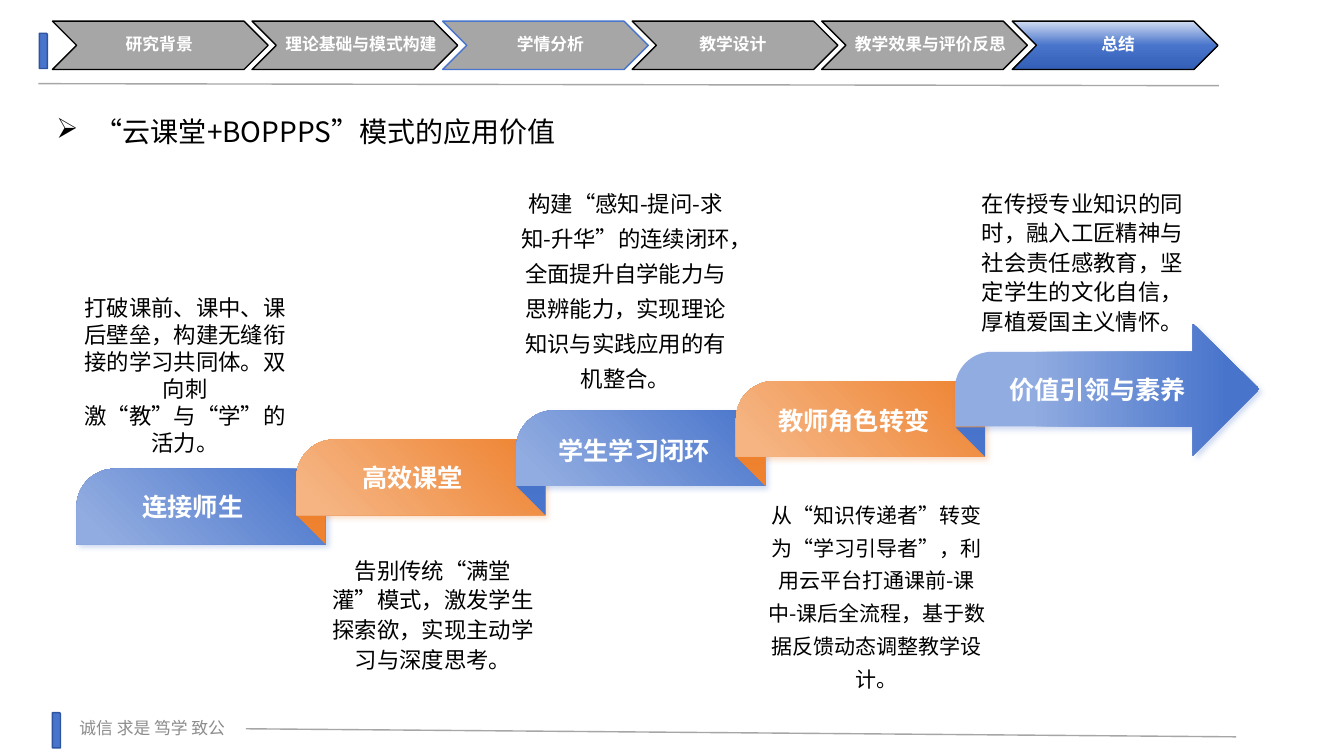
"""Build the slide on the application value of the teaching model."""
import math

from pptx import Presentation
from pptx import util as u
from pptx.dml.color import RGBColor
from pptx.enum import lang, shapes, text
from pptx.oxml import parse_xml
from pptx.oxml.ns import nsdecls, qn

COLORS = {
    "blue": "4874CB", "light_blue": "91ACE0", "edge_blue": "2E54A1",
    "pale_blue": "D1DCF2", "deep_blue": "345FB6",
    "orange": "EE822F", "light_orange": "F5B482",
    "gray": "A6A6A6", "motto": "8C8C8C", "black": "000000", "white": "FFFFFF",
}
CJK = "Noto Sans CJK SC"

# label, label left, chevron left, chevron width, outline
NAV = [
    ("研究背景", 0.73, 0.52, 2.14, "black"),
    ("理论基础与模式构建", 2.73, 2.5, 2.04, "black"),
    ("学情分析", 4.61, 4.39, 2.04, "blue"),
    ("教学设计", 6.42, 6.27, 2.04, "black"),
    ("教学效果与评价反思", 8.38, 8.15, 2.04, "black"),
    ("总结", 10.24, 10.04, 2.04, "black"),
]
MARKERS = [(0.39, 0.33), (0.52, 7.07)]
RULES = [(0.38, 0.83, 12.09, 0.85), (2.44, 7.23, 12.26, 7.31)]
MOTTO = "诚信 求是 笃学 致公"
TITLE = "“云课堂+BOPPPS”模式的应用价值"
STEPS = [
    ("连接师生", (0.08, 0.08, 0.35, 0.08)),
    ("高效课堂", (0.08, 0.08, 0.35, 0.08)),
    ("学生学习闭环", (0.08, 0.12, 0.32, 0.08)),
    ("教师角色转变", (0.08, 0.12, 0.32, 0.08)),
]
GOAL = "价值引领与素养"
# box, anchor, size, line spacing, words
NOTES = [
    ((0.74, 3.12, 2.19, 1.4), "BOTTOM", 16, None,
     "打破课前、课中、课后壁垒，构建无缝衔接的学习共同体。双向刺激“教”与“学”的活力。"),
    ((3.2, 5.5, 2.19, 1.25), "TOP", 16, 1.1,
     "告别传统“满堂灌”模式，激发学生探索欲，实现主动学习与深度思考。"),
    ((5.11, 2.49, 2.19, 1.4), "BOTTOM", 16, 1.3,
     "构建“感知-提问-求知-升华”的连续闭环，全面提升自学能力与思辨能力，实现理论知识与实践应用的有机整合。"),
    ((7.6, 4.91, 2.19, 1.25), "TOP", 15, 1.3,
     "从“知识传递者”转变为“学习引导者”，利用云平台打通课前-课中-课后全流程，基于数据反馈动态调整教学设计。"),
    ((9.64, 1.84, 2.19, 1.48), "BOTTOM", 16, 1.1,
     "在传授专业知识的同时，融入工匠精神与社会责任感教育，坚定学生的文化自信，厚植爱国主义情怀。"),
]
STEP_LEFT, STEP_TOP, STEP_DX, STEP_DY = 0.76, 4.65, 2.18, 0.29
BAND_W, BAND_H, FOLD = 2.47, 0.75, 0.29


def rgb(name):
    return RGBColor.from_string(COLORS[name])


def paint(sp, fill, line=None):
    sp.shadow.inherit = False
    sp.fill.solid()
    sp.fill.fore_color.rgb = rgb(fill)
    if line:
        sp.line.color.rgb = rgb(line)
        sp.line.width = u.Pt(1)
    else:
        sp.line.fill.background()


def add_gradient(sp, stops, angle):
    marks = "".join(
        f'<a:gs pos="{pos * 1000}"><a:srgbClr val="{COLORS[name]}"/></a:gs>'
        for pos, name in stops)
    grad = parse_xml(
        f'<a:gradFill {nsdecls("a")} rotWithShape="1"><a:gsLst>{marks}</a:gsLst>'
        f'<a:lin ang="{angle * 60000}" scaled="0"/></a:gradFill>')
    props = sp._element.spPr
    props.replace(props.find(qn("a:solidFill")), grad)


def add_shadow(sp, name):
    sp._element.spPr.find(qn("a:effectLst")).append(parse_xml(
        f'<a:outerShdw {nsdecls("a")} blurRad="50800" dist="38100" dir="2700000" '
        f'algn="tl" rotWithShape="0"><a:srgbClr val="{COLORS[name]}">'
        '<a:alpha val="25000"/></a:srgbClr></a:outerShdw>'))


def write(sp, words, size, color, font=CJK, bold=False, align="CENTER",
          anchor="TOP", insets=(0, 0, 0, 0), spacing=None, bullet=None):
    tf = sp.text_frame
    left, top, right, bottom = map(u.Inches, insets)
    frame = {"word_wrap": True, "margin_left": left, "margin_top": top,
             "margin_right": right, "margin_bottom": bottom,
             "vertical_anchor": getattr(text.MSO_ANCHOR, "MIDDLE" if anchor == "MIDDLE" else anchor)}
    for key, value in frame.items():
        setattr(tf, key, value)
    p = tf.paragraphs[0]
    p.alignment = getattr(text.PP_ALIGN, align)
    if spacing:
        p.line_spacing = spacing
    if bullet:
        pPr = p._p.get_or_add_pPr()
        pPr.set("marL", str(u.Inches(0.38)))
        pPr.set("indent", str(u.Inches(-0.38)))
        pPr.append(parse_xml(f'<a:buChar {nsdecls("a")} char="{bullet}"/>'))
    r = p.add_run()
    r.text = words
    style = {"name": font, "size": u.Pt(size), "bold": bold,
             "language_id": lang.MSO_LANGUAGE_ID.SIMPLIFIED_CHINESE}
    for key, value in style.items():
        setattr(r.font, key, value)
    r.font.color.rgb = rgb(color)
    r.font._element.find(qn("a:latin")).addnext(
        parse_xml(f'<a:ea {nsdecls("a")} typeface="{CJK}"/>'))


def main():
    prs = Presentation()
    prs.slide_width, prs.slide_height = u.Inches(13.33), u.Inches(7.5)
    s = prs.slides.add_slide(prs.slide_layouts[6])

    def shape(kind, *box):
        return s.shapes.add_shape(getattr(shapes.MSO_SHAPE, kind), *map(u.Inches, box))

    def textbox(*box):
        return s.shapes.add_textbox(*map(u.Inches, box))

    for left, top in MARKERS:
        paint(shape("ROUND_1_RECTANGLE", left, top, 0.08, 0.35), "blue", "edge_blue")
    for _, _, left, width, line in NAV:
        sp = shape("CHEVRON", left, 0.21, width, 0.48)
        paint(sp, "gray", line)
    add_gradient(sp, [(0, "pale_blue"), (50, "blue"), (100, "deep_blue")], 90)
    for ends in RULES:
        rule = s.shapes.add_connector(shapes.MSO_CONNECTOR.STRAIGHT, *map(u.Inches, ends))
        rule.line.color.rgb = rgb("gray")
        rule.line.width = u.Pt(1)
        rule._element.spPr.append(parse_xml(f'<a:effectLst {nsdecls("a")}/>'))
    write(textbox(0.69, 7.07, 2.9, 0.3), MOTTO, 12, "motto", "Arial",
          align="LEFT", insets=(0.1, 0.05, 0.1, 0.05))
    for label, left, *_ in NAV:
        write(textbox(left, 0.29, 1.7, 0.3), label, 12, "white", "Arial", True,
              insets=(0.05, 0.05, 0.05, 0.05))
    write(textbox(0.52, 0.93, 10.86, 0.46), TITLE, 20, "black", align="LEFT",
          insets=(0.04, 0.04, 0.04, 0.04), spacing=1.5, bullet="➢")

    for i, (label, insets) in enumerate(STEPS):
        left, top = STEP_LEFT + i * STEP_DX, STEP_TOP - i * STEP_DY
        color, after = ("blue", "orange") if i % 2 == 0 else ("orange", "blue")
        band = shape("ROUND_1_RECTANGLE", left, top, BAND_W, BAND_H)
        band.adjustments[0] = 0.5
        band._element.spPr.find(qn("a:xfrm")).set("flipH", "1")
        paint(band, color)
        add_gradient(band, [(0, color), (90, "light_" + color)], 45)
        add_shadow(band, color)
        write(band, label, 18, "white", bold=True, anchor="MIDDLE", insets=insets)
        fold = shape("RIGHT_TRIANGLE", left + STEP_DX, top + BAND_H - FOLD, FOLD, FOLD)
        fold.rotation = 180
        paint(fold, after)

    left, radius = 9.47, 0.37
    curve = [(left + radius * (1 - math.cos(a)), 3.86 - radius * math.sin(a))
             for a in (math.pi / 2 * n / 16 for n in range(17))]
    outline = [(11.83, 3.21), (12.49, 3.86), (11.83, 4.52), (11.83, 4.23),
               (left, 4.23), *curve, (11.83, 3.49)]
    points = [(u.Inches(x), u.Inches(y)) for x, y in outline]
    builder = s.shapes.build_freeform(*points[0])
    builder.add_line_segments(points[1:], close=True)
    arrow = builder.convert_to_shape()
    paint(arrow, "blue")
    add_gradient(arrow, [(25, "light_blue"), (90, "blue")], 0)
    add_shadow(arrow, "blue")
    write(arrow, GOAL, 18, "white", bold=True, anchor="MIDDLE",
          insets=(0.2, 0.16, 0.39, 0.16))

    for box, anchor, size, spacing, words in NOTES:
        write(textbox(*box), words, size, "black", anchor=anchor, spacing=spacing)
    prs.save("out.pptx")


if __name__ == "__main__":
    main()
